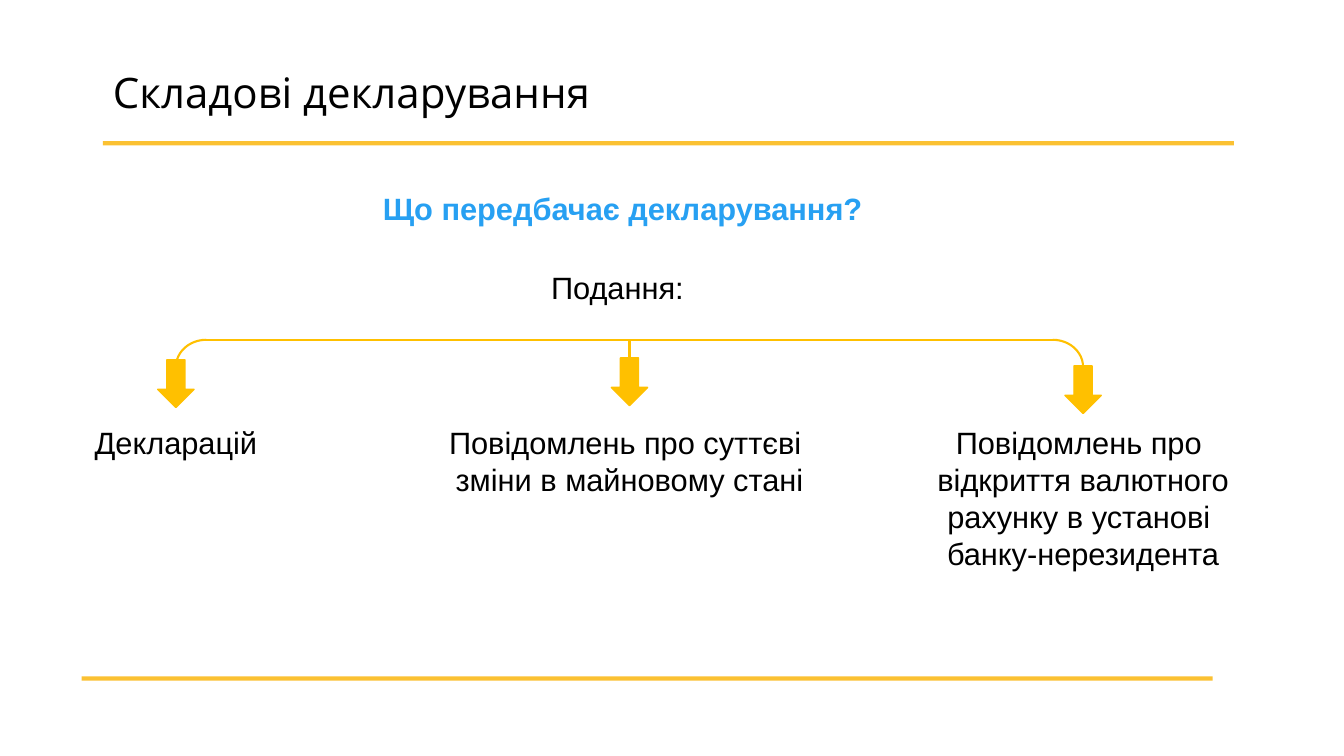
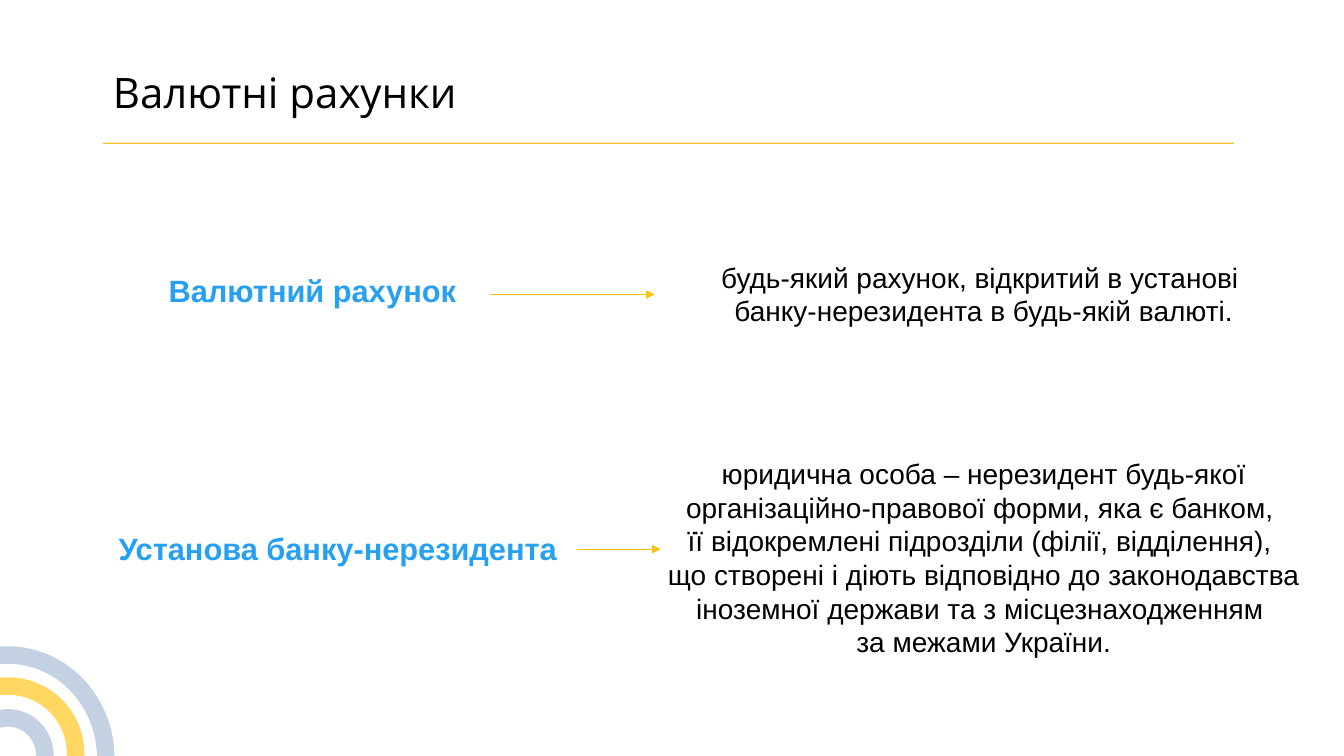
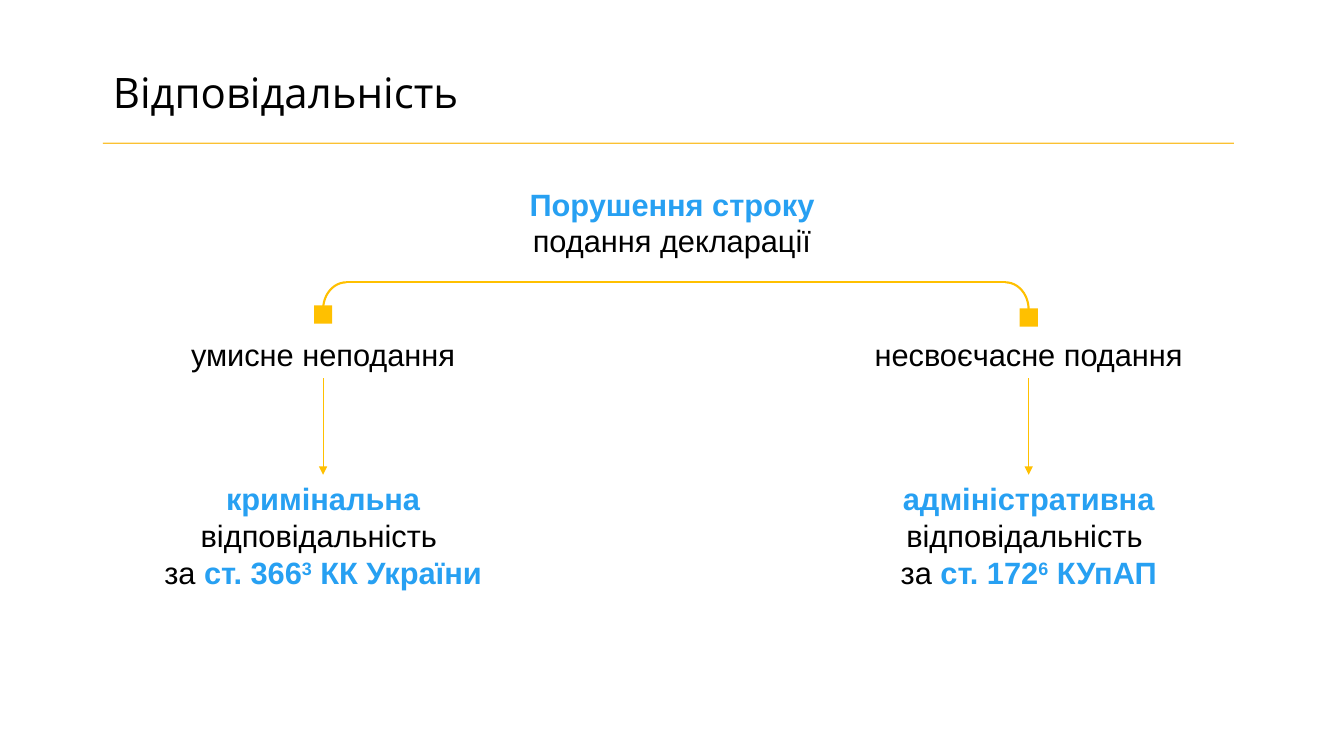
from dataclasses import dataclass

from pptx import Presentation
from pptx.dml.color import RGBColor
from pptx.enum.shapes import MSO_CONNECTOR, MSO_SHAPE
from pptx.enum.text import MSO_ANCHOR, MSO_AUTO_SIZE, PP_ALIGN
from pptx.oxml.ns import qn
from pptx.oxml.xmlchemy import OxmlElement
from pptx.util import Inches, Pt


@dataclass(frozen=True)
class Theme:
    text: str = "000000"
    accent: str = "27A0F2"
    gold: str = "FFC000"
    rule: str = "FBBB1C"
    ring: str = "9FB5D2"
    title_font: str = "Open Sans"
    body_font: str = "Arial"
    title_size: int = 30
    label_size: int = 22
    note_size: int = 20


@dataclass(frozen=True)
class Span:
    text: str
    strong: bool = False
    raised: bool = False


THEME = Theme()
WIDTH, HEIGHT = Inches(13.33), Inches(7.5)
RULE_WIDTH = 84.15


# Lengths are percentages of the slide's width and height
def across(share):
    return round(WIDTH * share / 100)


def down(share):
    return round(HEIGHT * share / 100)


def colour(name):
    return RGBColor.from_string(name)


# Lines and shapes
def set_opacity(shape, percent):
    for node in shape.line.fill._xPr.iter(qn("a:srgbClr")):
        alpha = OxmlElement("a:alpha")
        alpha.set("val", str(percent * 1000))
        node.append(alpha)


def add_line(page, start, end, weight, name=THEME.gold, arrow=False):
    line = page.shapes.add_connector(
        MSO_CONNECTOR.STRAIGHT,
        across(start[0]), down(start[1]), across(end[0]), down(end[1]))
    line.line.width = Pt(weight)
    line.line.color.rgb = colour(name)
    if arrow:
        tail = OxmlElement("a:tailEnd")
        tail.set("type", "triangle")
        line.line._get_or_add_ln().append(tail)
    line._element.spPr.append(OxmlElement("a:effectLst"))
    return line


def add_rule(page, left, top, weight):
    rule = add_line(page, (left, top), (left + RULE_WIDTH, top), weight, THEME.rule)
    set_opacity(rule, 90)


def add_figure(page, kind, centre, top, width, height, fill=None, line=None, weight=1):
    figure = page.shapes.add_shape(
        kind, across(centre - width / 2), down(top), across(width), down(height))
    figure.shadow.inherit = False
    if fill:
        figure.fill.solid()
        figure.fill.fore_color.rgb = colour(fill)
    else:
        figure.fill.background()
    if line:
        figure.line.color.rgb = colour(line)
        figure.line.width = Pt(weight)
    else:
        figure.line.fill.background()
    return figure


def add_bracket(page, left, right, top, arc_width):
    """A flat line whose two ends curve downwards."""
    radius = arc_width / 2
    add_line(page, (left + radius, top), (right - radius, top), 1.5)
    for centre, flipped in ((left + radius, True), (right - radius, False)):
        arc = add_figure(page, MSO_SHAPE.ARC, centre, top, arc_width, 7.2,
                         line=THEME.gold, weight=1.5)
        if flipped:
            arc._element.spPr.xfrm.set("flipH", "1")


def add_rings(page):
    rings = ((100.3, 14.55, 27.3, THEME.ring),
             (99.7, 10.05, 17.9, THEME.gold),
             (100, 5.5, 10.1, THEME.ring))
    for middle, width, height, name in rings:
        ring = add_figure(page, MSO_SHAPE.OVAL, 0.6, middle - height / 2,
                          width, height, line=name, weight=12.5)
        set_opacity(ring, 62)


# Text
def add_span(para, span):
    for index, piece in enumerate(span.text.split("\n")):
        if index:
            para.add_line_break()
        if not piece:
            continue
        run = para.add_run()
        run.text = piece
        if span.strong:
            run.font.bold = True
            run.font.color.rgb = colour(THEME.accent)
        if span.raised:
            run._r.get_or_add_rPr().set("baseline", "30000")


def add_text(page, centre, top, width, spans, lines=1,
             size=THEME.label_size, align=PP_ALIGN.CENTER):
    height = Inches(0.1) + Pt(size * 1.2 * lines)
    box = page.shapes.add_textbox(
        across(centre - width / 2), down(top), across(width), height)
    frame = box.text_frame
    frame.word_wrap = True
    para = frame.paragraphs[0]
    para.alignment = align
    para.font.name = THEME.body_font
    para.font.size = Pt(size)
    para.font.color.rgb = colour(THEME.text)
    for span in spans:
        add_span(para, span)


def add_page(deck, heading, rule_weight=1):
    page = deck.slides.add_slide(deck.slide_layouts[5])
    title = page.shapes.title
    title.left, title.top = across(7.65), down(8.15)
    title.width, title.height = across(78.75), down(8.15)
    frame = title.text_frame
    frame.text = heading
    frame.word_wrap = True
    frame.auto_size = MSO_AUTO_SIZE.NONE
    frame.vertical_anchor = MSO_ANCHOR.TOP
    para = frame.paragraphs[0]
    para.alignment = PP_ALIGN.LEFT
    para.font.name = THEME.title_font
    para.font.size = Pt(THEME.title_size)
    para.font.color.rgb = colour(THEME.text)
    add_rule(page, 7.65, 18.95, rule_weight)
    return page


# Slides
def build_components(deck):
    page = add_page(deck, "Складові декларування", rule_weight=3)
    add_text(page, 46.58, 24.4, 37.65, [Span("Що передбачає декларування?", strong=True)],
             align=PP_ALIGN.LEFT)
    add_text(page, 45.94, 34.95, 35.9, [Span("Подання:")])

    first, step, bracket_top = 13.09, 33.75, 44.95
    middle = first + step
    add_bracket(page, first, first + 2 * step, bracket_top, 4.5)
    add_line(page, (middle, bracket_top), (middle, 47.6), 1.5)
    branches = (
        (47.6, 20.5, "Декларацій"),
        (47.35, 28.75, "Повідомлень про суттєві \nзміни в майновому стані"),
        (48.4, 32.5, "Повідомлень про \nвідкриття валютного\n"
                     "рахунку в установі \nбанку-нерезидента"),
    )
    for index, (arrow_top, width, label) in enumerate(branches):
        centre = first + index * step
        add_figure(page, MSO_SHAPE.DOWN_ARROW, centre, arrow_top, 2.7, 6.3,
                   fill=THEME.gold, line=THEME.gold)
        add_text(page, centre, 55.45, width, [Span(label)], lines=label.count("\n") + 1)
    add_rule(page, 6.08, 89.75, 3)


def build_accounts(deck):
    page = add_page(deck, "Валютні рахунки")
    add_rings(page)
    definitions = (
        ("Валютний рахунок", 23.25, 35.35, 23.25, (36.45, 48.7, 38.95), 33.75, 2,
         "будь-який рахунок, відкритий в установі \nбанку-нерезидента в будь-якій валюті."),
        ("Установа банку-нерезидента", 25.13, 69.35, 34.5, (42.9, 49.15, 72.65), 59.75, 6,
         "юридична особа – нерезидент будь-якої "
         "організаційно-правової форми, яка є банком, \n"
         "її відокремлені підрозділи (філії, відділення), \n"
         "що створені і діють відповідно до законодавства "
         "іноземної держави та з місцезнаходженням \nза межами України."),
    )
    for term, centre, top, width, (start, end, level), note_top, lines, note in definitions:
        add_text(page, centre, top, width, [Span(term, strong=True)])
        add_line(page, (start, level), (end, level), 0.5, arrow=True)
        add_text(page, 73.2, note_top, 49.05, [Span(note)], lines, THEME.note_size)


def build_liability(deck):
    page = add_page(deck, "Відповідальність")
    add_text(page, 50, 23.85, 23.5,
             [Span("Порушення строку ", strong=True), Span("подання декларації")], lines=2)
    left, right = 24.04, 76.54
    add_bracket(page, left, right, 37.35, 3.45)
    branches = (
        (left, 40.4, "умисне неподання", 23.5,
         "кримінальна ", "ст. 366", "3", " КК України", 27.8),
        (right, 40.8, "несвоєчасне подання", 27.9,
         "адміністративна ", "ст. 172", "6", " КУпАП", 24.7),
    )
    for centre, mark_top, cause, cause_width, kind, article, index, code, width in branches:
        add_figure(page, MSO_SHAPE.RECTANGLE, centre, mark_top, 1.35, 2.4, fill=THEME.gold)
        add_text(page, centre, 43.75, cause_width, [Span(cause)])
        add_line(page, (centre, 50), (centre, 62.8), 0.5, arrow=True)
        add_text(page, centre, 62.8, width, [
            Span(kind, strong=True),
            Span("відповідальність \nза "),
            Span(article, strong=True),
            Span(index, strong=True, raised=True),
            Span(code, strong=True),
        ], lines=3)


def main():
    deck = Presentation()
    deck.slide_width, deck.slide_height = WIDTH, HEIGHT
    build_components(deck)
    build_accounts(deck)
    build_liability(deck)
    deck.save("out.pptx")


if __name__ == "__main__":
    main()
